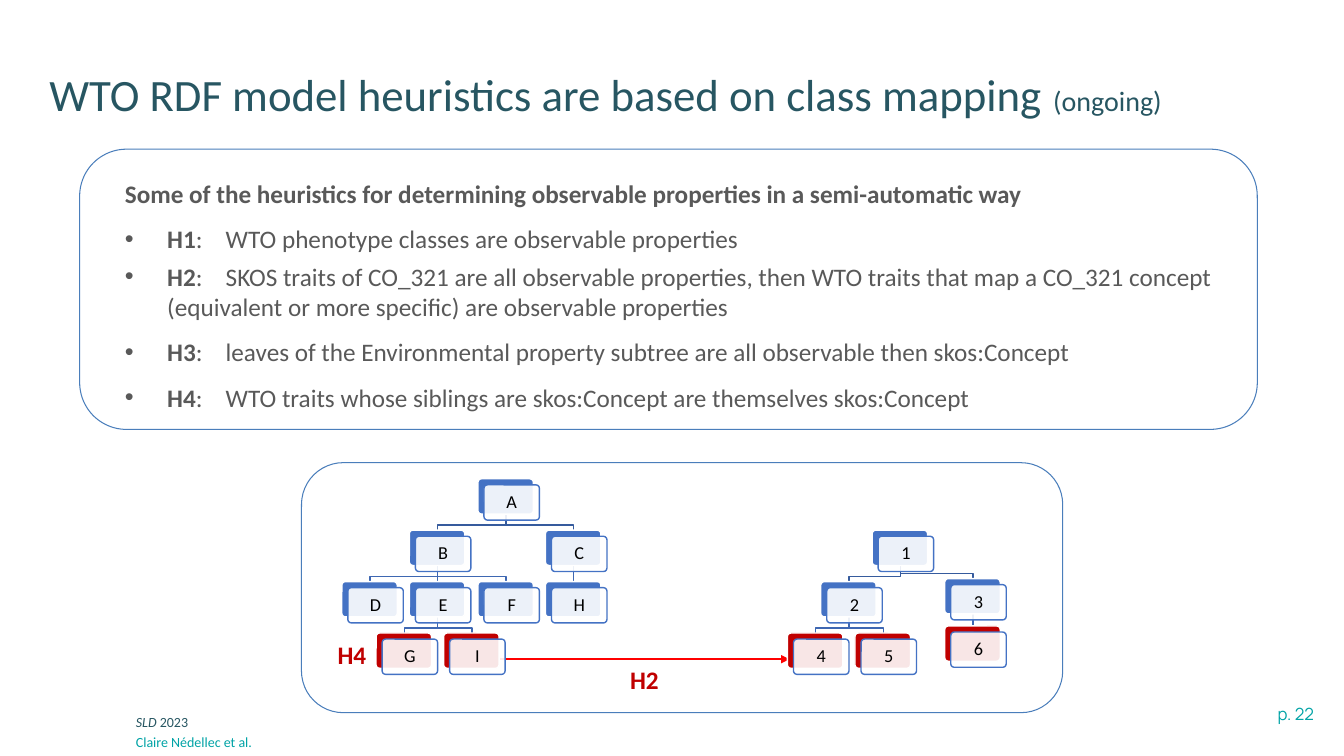
from lxml import etree
from pptx import Presentation
from pptx.dml.color import RGBColor
from pptx.enum.shapes import MSO_CONNECTOR, MSO_SHAPE
from pptx.enum.text import MSO_ANCHOR, PP_ALIGN
from pptx.oxml.ns import qn
from pptx.util import Pt

SCALE = 9144  # EMU per px, 100 px to the inch
LEFT, CENTER, RIGHT = PP_ALIGN.LEFT, PP_ALIGN.CENTER, PP_ALIGN.RIGHT
TOP, MIDDLE = MSO_ANCHOR.TOP, MSO_ANCHOR.MIDDLE
ROUNDED, STRAIGHT = MSO_SHAPE.ROUNDED_RECTANGLE, MSO_CONNECTOR.STRAIGHT
COLORS = {name: RGBColor.from_string(value) for name, value in {
    "title": "275662", "teal": "00A3A6", "body": "595959", "black": "000000",
    "white": "FFFFFF", "frame": "4A7EBB", "card": "4472C4", "red": "C00000",
    "arrow": "FF0000", "root edge": "365B9D", "edge": "3E67B2"}.items()}

deck = Presentation()
deck.slide_width, deck.slide_height = 1333 * SCALE, 750 * SCALE
page = deck.slides.add_slide(deck.slide_layouts[6])
shapes = page.shapes


def write(para, text, size=18, color="body", bold=False, italic=False, font="Calibri"):
    span = para.add_run()
    span.text = text
    span.font.size, span.font.name = Pt(size), font
    span.font.bold, span.font.italic = bold, italic
    span.font.color.rgb = COLORS[color]


def add_rounded(place, radius, line, weight, fill=None):
    box = shapes.add_shape(ROUNDED, *[value * SCALE for value in place])
    box.adjustments[0] = radius
    box.shadow.inherit = False
    box.line.color.rgb, box.line.width = COLORS[line], Pt(weight)
    if fill:
        box.fill.solid()
        box.fill.fore_color.rgb = COLORS[fill]
    else:
        box.fill.background()
    return box


# Frames around the heuristics and the trees
for place in [(79, 148, 1168, 278), (299, 459, 755, 248)]:
    add_rounded(place, 0.167, "frame", 0.75)

# Heuristics: label, text, line spacing, space after
body = shapes.add_textbox(114 * SCALE, 157 * SCALE, 1168 * SCALE, 255 * SCALE).text_frame
body.word_wrap = True
heading = body.paragraphs[0]
heading.line_spacing = 1.5
write(heading, "Some of the heuristics for determining observable properties in a semi-automatic way",
      bold=True)
heuristics = [
    ("H1", "WTO phenotype classes are observable properties", 1.5, 5),
    ("H2", "SKOS traits of CO_321 are all observable properties, then WTO traits that map a "
           "CO_321 concept \t(equivalent or more specific) are observable properties", 1.0, 0),
    ("H3", "leaves of the Environmental property subtree are all observable then skos:Concept", 1.5, 0),
    ("H4", "WTO traits whose siblings are skos:Concept are themselves skos:Concept", 1.5, 0),
]
for label, text, spacing, after in heuristics:
    para = body.add_paragraph()
    para.line_spacing, para.space_after = spacing, Pt(after)
    properties = para._p.get_or_add_pPr()
    properties.set("marL", str(42 * SCALE))
    properties.set("indent", str(-42 * SCALE))
    etree.SubElement(properties, qn("a:buFont")).set("typeface", "Arial")
    etree.SubElement(properties, qn("a:buChar")).set("char", "•")
    write(para, label, bold=True)
    write(para, ":\t" + text)

# Mapping arrow from I to 4
arrow = shapes.add_connector(STRAIGHT, *[value * SCALE for value in (471, 654, 783, 654)])
arrow.line.color.rgb, arrow.line.width = COLORS["arrow"], Pt(1.5)
for end in ("a:headEnd", "a:tailEnd"):
    etree.SubElement(arrow.line._get_or_add_ln(), qn(end)).set("type", "triangle")
etree.SubElement(arrow._element.spPr, qn("a:effectLst"))

# Trees: left and top of each card, and its parent
cards = {
    "A": (474, 475, None), "B": (406, 526, "A"), "C": (541, 526, "A"),
    "D": (339, 577, "B"), "E": (406, 577, "B"), "F": (474, 577, "B"), "H": (541, 577, "C"),
    "G": (373, 628, "E"), "I": (440, 628, "E"),
    "1": (865, 526, None), "2": (814, 577, "1"), "3": (937, 574, "1"),
    "4": (781, 628, "2"), "5": (848, 628, "2"), "6": (937, 621, "3"),
}
CARD_WIDTH, CARD_HEIGHT, OFFSET = 55, 35, 6

# Branches
for left, top, parent in cards.values():
    if parent is None:
        continue
    parent_left, parent_top, grandparent = cards[parent]
    start_x, start_y = parent_left + 28, parent_top + CARD_HEIGHT
    end_x, bend_y = left + 28, top - 5
    if start_x == end_x:
        branch = shapes.add_connector(
            STRAIGHT, *[value * SCALE for value in (start_x, start_y, end_x, top)])
        etree.SubElement(branch._element.spPr, qn("a:effectLst"))
    else:
        outline = shapes.build_freeform(start_x, start_y, scale=SCALE)
        outline.add_line_segments(
            [(start_x, bend_y), (end_x, bend_y), (end_x, top)], close=False)
        branch = outline.convert_to_shape()
        branch.fill.background()
        branch.shadow.inherit = False
    branch.line.color.rgb = COLORS["edge" if grandparent else "root edge"]
    branch.line.width = Pt(1)

# Cards
for label, (left, top, parent) in cards.items():
    back = "red" if label in "GI456" else "card"
    add_rounded((left, top, CARD_WIDTH, CARD_HEIGHT), 0.1, "white", 1, back)
    front = add_rounded((left + OFFSET, top + OFFSET, CARD_WIDTH, CARD_HEIGHT),
                        0.1, "card", 1, "white")
    color = front.fill._xPr.find(qn("a:solidFill"))[0]
    etree.SubElement(color, qn("a:alpha")).set("val", "90000")
    frame = front.text_frame
    frame.margin_left = frame.margin_right = frame.margin_top = frame.margin_bottom = 5 * SCALE
    frame.vertical_anchor = MIDDLE
    para = frame.paragraphs[0]
    para.alignment, para.line_spacing = CENTER, 0.9
    write(para, label, size=13, color="black")

# Title, footer and tree labels: place, alignment, anchor, wrap, inset, spans
labels = [
    ((49, 34, 1200, 125), LEFT, MIDDLE, True, 0, [
        ("WTO RDF model heuristics are based on class mapping ", dict(size=32, color="title")),
        ("(ongoing)", dict(size=20, color="title"))]),
    ((1085, 693, 228, 30), RIGHT, TOP, True, 10,
     [("p. 22", dict(size=12, color="teal", font="Manrope"))]),
    ((125, 703, 734, 27), LEFT, TOP, True, 10, [
        ("SLD ", dict(size=10, color="title", italic=True)),
        ("2023", dict(size=10, color="title"))]),
    ((125, 723, 734, 28), LEFT, TOP, True, 10,
     [("Claire Nédellec et al.", dict(size=10, color="teal"))]),
    ((615, 654, 49, 40), LEFT, TOP, False, 10, [("H2", dict(color="red", bold=True))]),
    ((325, 629, 49, 40), LEFT, TOP, False, 10, [("H4", dict(color="red", bold=True))]),
]
for place, alignment, anchor, wrap, inset, spans in labels:
    frame = shapes.add_textbox(*[value * SCALE for value in place]).text_frame
    frame.word_wrap, frame.vertical_anchor = wrap, anchor
    frame.margin_left = frame.margin_right = inset * SCALE
    frame.margin_top = frame.margin_bottom = inset // 2 * SCALE
    para = frame.paragraphs[0]
    para.alignment = alignment
    if anchor == MIDDLE:
        para.line_spacing = 0.9
    for text, style in spans:
        write(para, text, **style)

deck.save("out.pptx")
